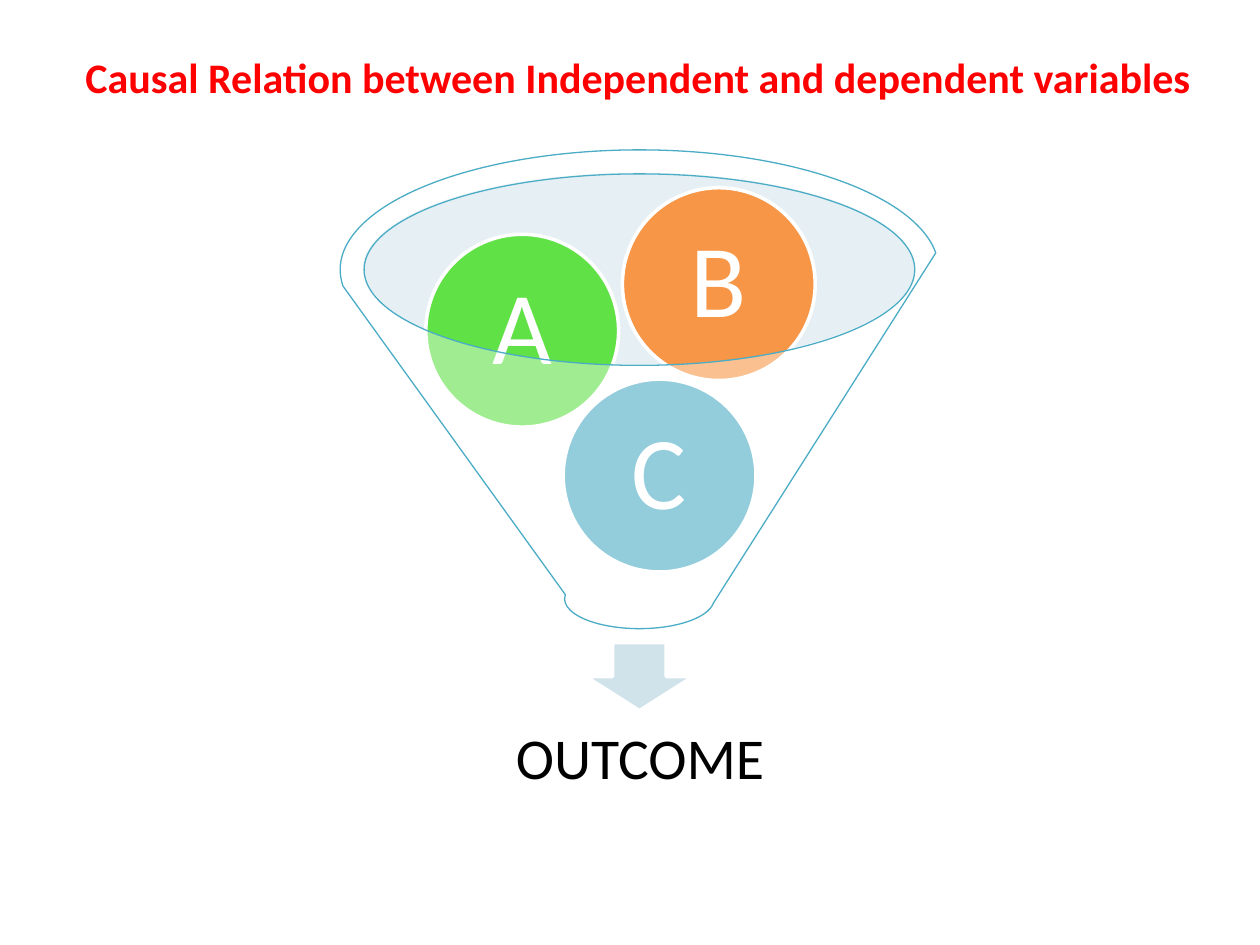
from pptx import Presentation
from pptx.dml.color import RGBColor
from pptx.enum.shapes import MSO_SHAPE
from pptx.enum.text import MSO_ANCHOR, PP_ALIGN
from pptx.oxml.ns import qn
from pptx.util import Inches, Pt
from lxml.etree import SubElement

# Content
TITLE = "Causal Relation between Independent and dependent variables"
OUTCOME = "OUTCOME"
VARIABLES = [  # letter, fill, left, top
    ("C", "4BACC6", 4.47, 3.01),
    ("A", "60E146", 3.38, 1.86),
    ("B", "F79646", 4.94, 1.49),
]
BALL = 1.53

THEME = {
    "font": "Calibri",
    "title": "FF0000", "text": "000000", "white": "FFFFFF",
    "outline": "4BACC6", "mouth": "C1DBE5", "arrow": "D0E3EA",
    "title_size": 24, "outcome_size": 33, "letter_size": 59,
}


def rgb(key):
    return RGBColor.from_string(THEME.get(key, key))


def add_shape(kind, box, fill, alpha=None, line=None, width=2):
    sp = slide.shapes.add_shape(kind, *map(Inches, box))
    sp.shadow.inherit = False
    sp.fill.solid()
    sp.fill.fore_color.rgb = rgb(fill)
    if alpha is not None:
        color = sp.fill._xPr.find(qn("a:solidFill"))[0]
        SubElement(color, qn("a:alpha")).set("val", str(alpha * 1000))
    if line:
        sp.line.color.rgb = rgb(line)
        sp.line.width = Pt(width)
    else:
        sp.line.fill.background()
    return sp


def write(sp, text, size, color, inset, align=PP_ALIGN.CENTER, spacing=0.9,
          anchor=MSO_ANCHOR.MIDDLE, bold=False, wrap=True):
    tf = sp.text_frame
    tf.word_wrap = wrap
    tf.vertical_anchor = anchor
    if inset is not None:
        tf.margin_left = tf.margin_right = Inches(inset)
        tf.margin_top = tf.margin_bottom = Inches(inset)
    p = tf.paragraphs[0]
    p.text = text
    p.alignment = align
    p.line_spacing = spacing
    p.font.name = THEME["font"]
    p.font.size = Pt(THEME[size])
    p.font.bold = bold
    p.font.color.rgb = rgb(color)


prs = Presentation()
prs.slide_width, prs.slide_height = Inches(10), Inches(7.5)
slide = prs.slides.add_slide(prs.slide_layouts[6])

# Funnel mouth, arrow and outcome
add_shape(MSO_SHAPE.OVAL, (2.88, 1.37, 4.38, 1.52), "mouth", alpha=40)
add_shape(MSO_SHAPE.DOWN_ARROW, (4.65, 5.1, 0.85, 0.54), "arrow", line="white")
outcome = slide.shapes.add_textbox(*map(Inches, (3.04, 5.53, 4.08, 1.02)))
write(outcome, OUTCOME, "outcome_size", "text", 0.26)

# Independent variables
for letter, fill, left, top in VARIABLES:
    ball = add_shape(MSO_SHAPE.OVAL, (left, top, BALL, BALL), fill, line="white")
    write(ball, letter, "letter_size", "white", 0.08)

# Translucent funnel over the variables
add_shape(MSO_SHAPE.FUNNEL, (2.7, 1.19, 4.75, 3.8), "white", alpha=40,
          line="outline", width=0.75)

# Title
title = slide.shapes.add_textbox(*map(Inches, (0.58, 0.36, 9.07, 0.5)))
write(title, TITLE, "title_size", "title", None, align=PP_ALIGN.LEFT,
      spacing=1.0, anchor=MSO_ANCHOR.TOP, bold=True, wrap=False)

prs.save("out.pptx")
